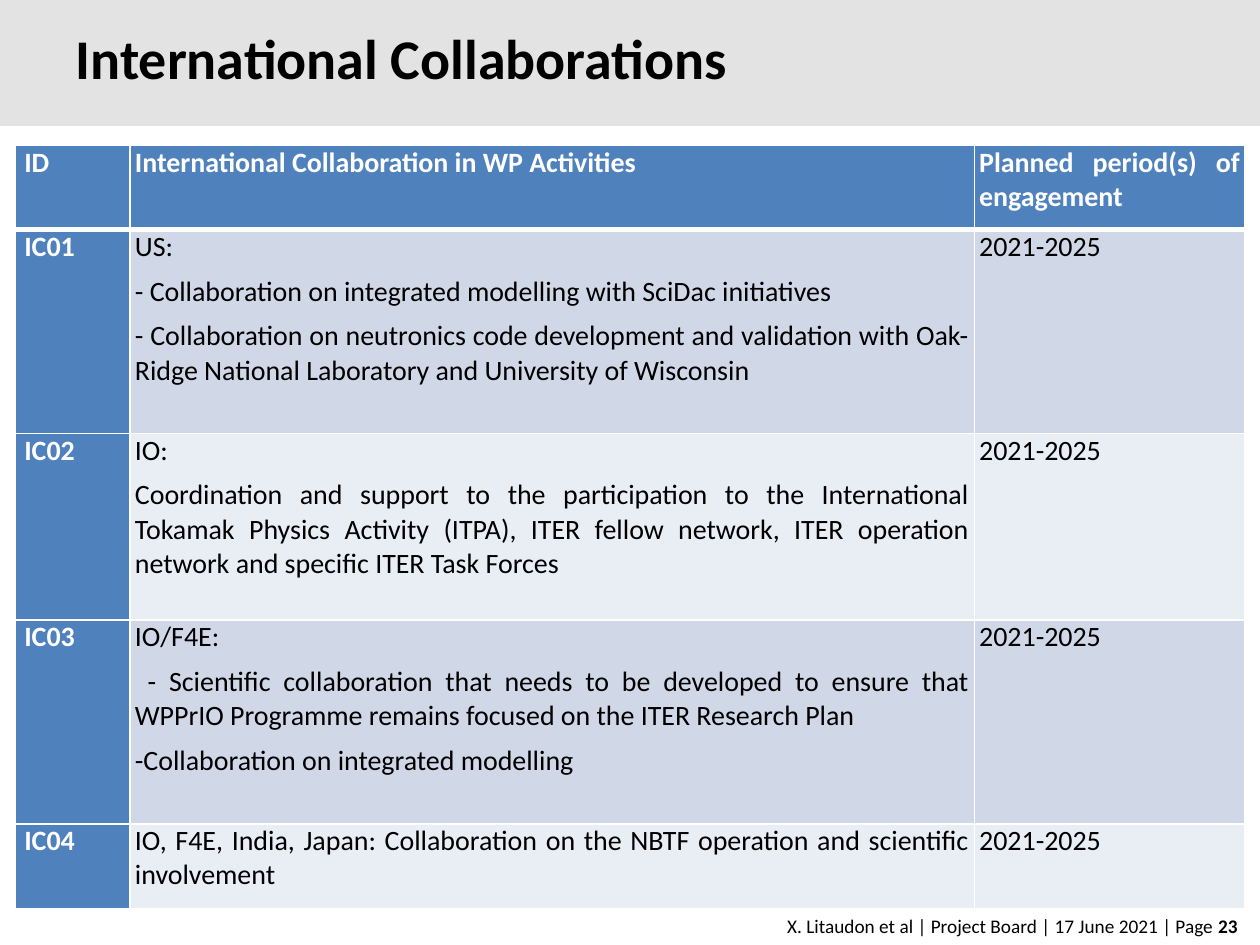
import pptx
import pptx.util
import pptx.dml.color
import pptx.enum.shapes
import pptx.enum.text
import pptx.oxml
import pptx.oxml.ns
from pptx.util import Cm, Pt

FONT = "Calibri"
BLACK, WHITE, GREY, BLUE = "000000", "FFFFFF", "E3E3E3", "4F81BD"
BANDS = ("D0D8E8", "E9EDF4")

TITLE = "International Collaborations"
FOOTER = "X. Litaudon et al | Project Board | 17 June 2021 | Page "
PAGE = "23"
HEADER = ("ID", ["International Collaboration in WP Activities"],
          "Planned period(s) of engagement")
COLLABORATIONS = [
    ("IC01", ["US: ",
              "- Collaboration on integrated modelling with SciDac initiatives",
              "- Collaboration on neutronics code development and validation with "
              "Oak-Ridge National Laboratory and University of Wisconsin"], "2021-2025"),
    ("IC02", ["IO: ",
              "Coordination and support to the participation to the International "
              "Tokamak Physics Activity (ITPA), ITER fellow network, ITER operation "
              "network and specific ITER Task Forces"], "2021-2025"),
    ("IC03", ["IO/F4E:",
              " - Scientific collaboration that needs to be developed to ensure that "
              "WPPrIO Programme remains focused on the ITER Research Plan ",
              "-Collaboration on integrated modelling"], "2021-2025"),
    ("IC04", ["IO, F4E, India, Japan: Collaboration on the NBTF operation and "
              "scientific involvement"], "2021-2025"),
]
COLUMN_WIDTHS = (2.31, 17.02, 5.46)
ROW_HEIGHTS = (1.7, 4.11, 3.76, 4.11, 1.7)


def color(value):
    return pptx.dml.color.RGBColor.from_string(value)


def set_font(font, size, value, bold=False):
    font.name, font.size, font.bold = FONT, Pt(size), bold
    font.color.rgb = color(value)


def set_borders(cell, **widths):
    """Draw white borders; widths are points keyed by side (L, R, T, B)."""
    properties = cell._tc.get_or_add_tcPr()
    for index, side in enumerate("LRTB"):
        properties.insert(index, pptx.oxml.parse_xml(
            f'<a:ln{side} {pptx.oxml.ns.nsdecls("a")} w="{Pt(widths.get(side, 1))}">'
            f'<a:solidFill><a:srgbClr val="{WHITE}"/></a:solidFill></a:ln{side}>'))


def add_title(slide):
    band = slide.shapes.add_shape(pptx.enum.shapes.MSO_SHAPE.RECTANGLE,
                                  0, 0, Cm(25.4), Cm(2.54))
    band.shadow.inherit = False
    band.fill.solid()
    band.fill.fore_color.rgb = color(GREY)
    band.line.fill.background()

    title = slide.shapes.title
    title.element.addprevious(band.element)
    title.left, title.top, title.width, title.height = Cm(1.27), 0, Cm(20.96), Cm(2.54)
    title.text = TITLE
    title.text_frame.vertical_anchor = pptx.enum.text.MSO_ANCHOR.MIDDLE
    paragraph = title.text_frame.paragraphs[0]
    paragraph.alignment = pptx.enum.text.PP_ALIGN.LEFT
    paragraph.line_spacing = Pt(32)
    set_font(paragraph.font, 32, BLACK, True)


def add_footer(slide):
    footer = slide.shapes.add_textbox(Cm(2.31), Cm(18.31), Cm(22.89), Cm(0.74))
    footer.text_frame.word_wrap = True
    paragraph = footer.text_frame.paragraphs[0]
    paragraph.alignment = pptx.enum.text.PP_ALIGN.RIGHT
    for text, bold in ((FOOTER, False), (PAGE, True)):
        run = paragraph.add_run()
        run.text = text
        set_font(run.font, 11, BLACK, bold)


def fill_cell(cell, text, row, column):
    emphasized = row == 0 or column == 0
    cell.fill.solid()
    cell.fill.fore_color.rgb = color(BLUE if emphasized else BANDS[(row - 1) % 2])
    cell.margin_left = cell.margin_right = Cm(0.18 if column == 0 else 0.1)
    cell.margin_top = cell.margin_bottom = 0
    cell.text = "\n".join(text) if isinstance(text, list) else text
    for paragraph in cell.text_frame.paragraphs:
        paragraph.alignment = pptx.enum.text.PP_ALIGN.JUSTIFY
        paragraph.space_after = Pt(6)
        set_font(paragraph.font, 16, WHITE if emphasized else BLACK, emphasized)
    set_borders(cell, T=3 if row == 1 else 1, B=3 if row == 0 else 1)


def add_collaborations(slide):
    rows = [HEADER, *COLLABORATIONS]
    table = slide.shapes.add_table(
        len(rows), len(HEADER), Cm(0.31), Cm(2.93),
        Cm(sum(COLUMN_WIDTHS)), Cm(sum(ROW_HEIGHTS))).table
    for column, width in zip(table.columns, COLUMN_WIDTHS):
        column.width = Cm(width)
    for row, height in zip(table.rows, ROW_HEIGHTS):
        row.height = Cm(height)
    for row, texts in enumerate(rows):
        for column, text in enumerate(texts):
            fill_cell(table.cell(row, column), text, row, column)


def main():
    presentation = pptx.Presentation()
    presentation.slide_width, presentation.slide_height = Cm(25.4), Cm(19.05)
    slide = presentation.slides.add_slide(presentation.slide_layouts[5])
    add_title(slide)
    add_footer(slide)
    add_collaborations(slide)
    presentation.save("out.pptx")


if __name__ == "__main__":
    main()
